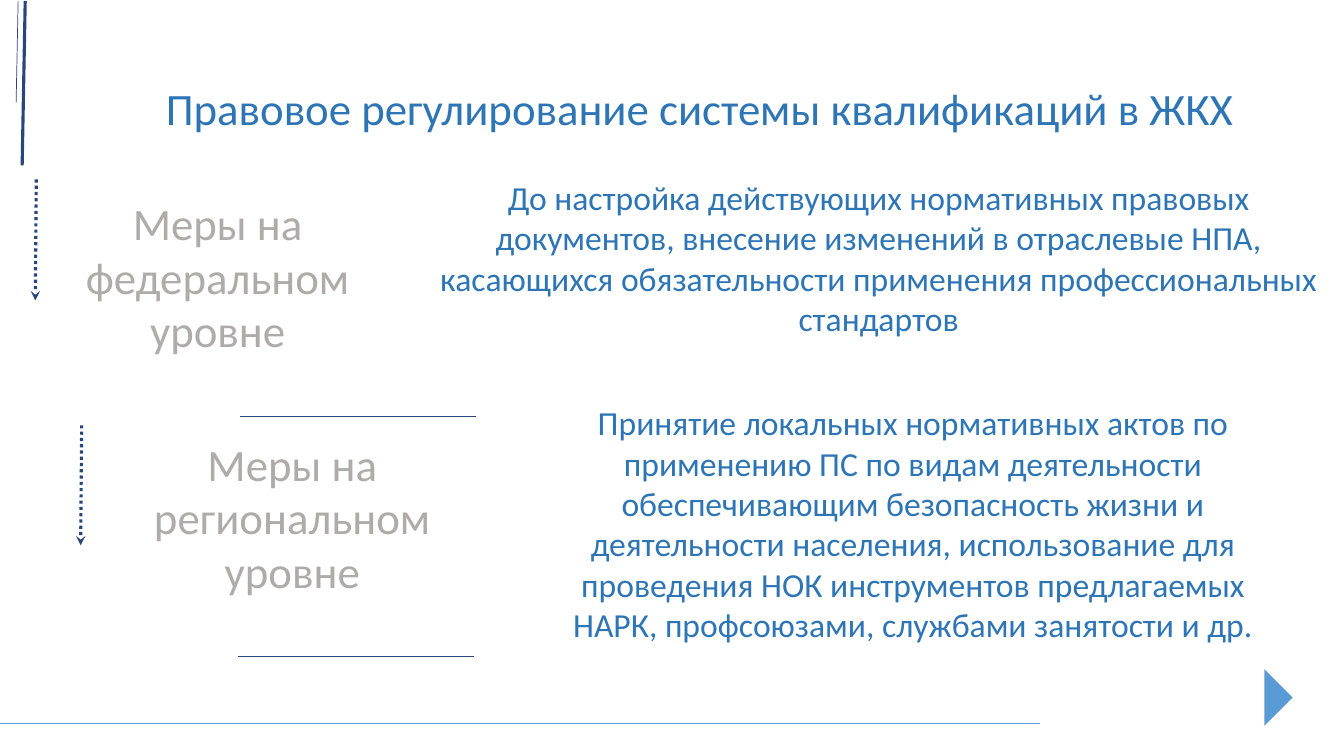
import pptx
import pptx.util
import pptx.oxml
import pptx.dml.color
import pptx.enum.dml
import pptx.enum.shapes
import pptx.enum.text

Inches = pptx.util.Inches
Pt = pptx.util.Pt
Anchor = pptx.enum.text.MSO_ANCHOR

HUES = {"navy": "28467C", "blue": "2E75B6", "gray": "AFABAB", "sky": "5B9BD5"}

TEXTS = [
    ("Правовое регулирование системы квалификаций в ЖКХ",
     (1.51, 0.48, 10.87, 1.17), "title"),
    ("Меры на федеральном уровне", (0.63, 1.89, 3.06, 1.72), "level"),
    ("До настройка действующих нормативных правовых документов, "
     "внесение изменений в отраслевые НПА, касающихся обязательности "
     "применения профессиональных стандартов",
     (4.13, 1.64, 9.17, 1.83), "body"),
    ("Меры на региональном уровне", (1.1, 4.28, 3.6, 1.72), "level"),
    ("Принятие локальных нормативных актов по применению ПС по видам "
     "деятельности обеспечивающим безопасность жизни и деятельности "
     "населения, использование для проведения НОК инструментов "
     "предлагаемых НАРК, профсоюзами, службами занятости и др.",
     (5.29, 3.88, 7.53, 2.62), "body"),
]
STYLES = {
    "title": (32, "blue", Anchor.MIDDLE),
    "level": (32, "gray", Anchor.TOP),
    "body": (24, "blue", Anchor.MIDDLE),
}
LINES = [
    ((0.25, 0.01), (0.22, 1.64), "navy", 2.25),
    ((0.18, 0.01), (0.16, 1.02), "navy", 0.5),
    ((2.38, 4.13), (4.72, 4.13), "navy", 0.5),
    ((2.36, 6.51), (4.7, 6.51), "navy", 0.5),
    ((0, 7.18), (10.32, 7.18), "sky", 0.5),
]
ARROWS = [
    ((0.36, 1.78), (0.35, 2.98), "navy", 2.25),
    ((0.81, 4.22), (0.8, 5.41), "navy", 2.25),
]
MARK = (12.4, 6.78, 0.56, 0.28)
NS = 'xmlns:a="http://schemas.openxmlformats.org/drawingml/2006/main"'


def tint(name):
    return pptx.dml.color.RGBColor.from_string(HUES[name])


def put(obj, vals):
    for key, val in vals.items():
        setattr(obj, key, val)


def add_line(slide, start, end, hue, width):
    line = slide.shapes.add_connector(
        pptx.enum.shapes.MSO_CONNECTOR.STRAIGHT,
        *map(Inches, start + end))
    line.line.color.rgb = tint(hue)
    line.line.width = Pt(width)
    line._element.spPr.append(pptx.oxml.parse_xml(f"<a:effectLst {NS}/>"))
    return line


def add_arrow(slide, *args):
    line = add_line(slide, *args).line
    line.dash_style = pptx.enum.dml.MSO_LINE.ROUND_DOT
    tip = pptx.oxml.parse_xml(f'<a:tailEnd {NS} type="stealth"/>')
    line._get_or_add_ln().append(tip)


def add_text(slide, text, area, style):
    size, hue, anchor = STYLES[style]
    frame = slide.shapes.add_textbox(*map(Inches, area)).text_frame
    put(frame, {"word_wrap": True, "vertical_anchor": anchor})
    para = frame.paragraphs[0]
    para.alignment = pptx.enum.text.PP_ALIGN.CENTER
    run = para.add_run()
    run.text = text
    put(run.font, {"name": "Calibri", "size": Pt(size)})
    run.font.color.rgb = tint(hue)


def add_mark(slide):
    mark = slide.shapes.add_shape(
        pptx.enum.shapes.MSO_SHAPE.ISOSCELES_TRIANGLE, *map(Inches, MARK))
    mark.rotation = 90
    mark.shadow.inherit = False
    mark.fill.solid()
    mark.fill.fore_color.rgb = tint("sky")
    mark.line.fill.background()


def main():
    deck = pptx.Presentation()
    put(deck, {"slide_width": Inches(13.33), "slide_height": Inches(7.5)})
    slide = deck.slides.add_slide(deck.slide_layouts[6])
    for item in LINES:
        add_line(slide, *item)
    for item in ARROWS:
        add_arrow(slide, *item)
    for item in TEXTS:
        add_text(slide, *item)
    add_mark(slide)
    deck.save("out.pptx")


if __name__ == "__main__":
    main()
